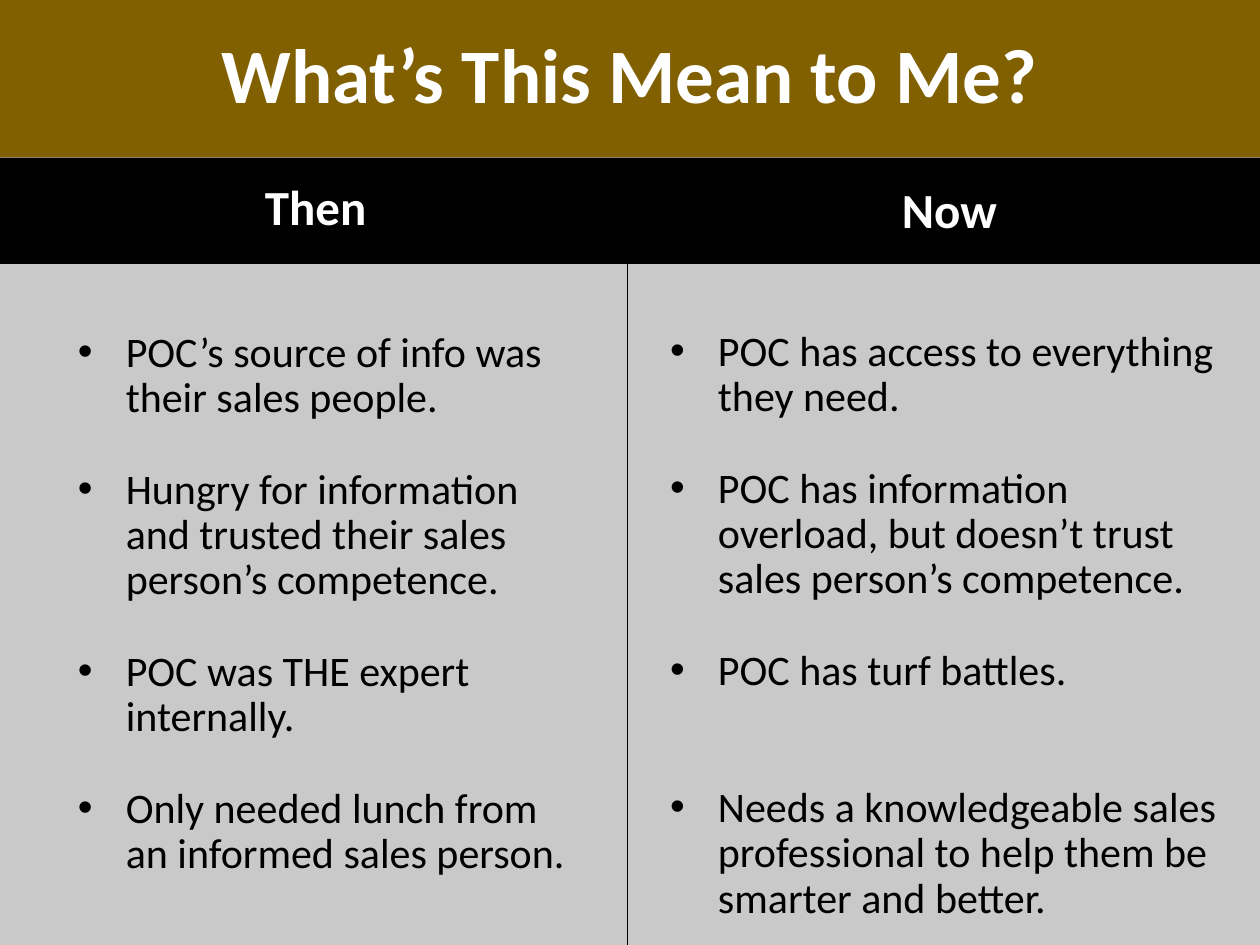
from dataclasses import dataclass

from lxml.etree import SubElement
from pptx import Presentation
from pptx.dml.color import RGBColor
from pptx.enum.shapes import MSO_SHAPE
from pptx.enum.text import MSO_ANCHOR, PP_ALIGN
from pptx.oxml.ns import qn
from pptx.util import Inches, Pt


@dataclass(frozen=True)
class Theme:
    font: str = "Calibri"
    gold: str = "806000"
    black: str = "000000"
    white: str = "FFFFFF"
    gray: str = "C9C9C9"
    title: int = 44
    head: int = 28
    body: int = 24
    gap: float = 26.3
    lead: float = 0.9


@dataclass(frozen=True)
class Box:
    left: float
    top: float
    width: float
    height: float

    def inner(self, left, top, width, height):
        return Box(self.left + left, self.top + top, width, height)

    def place(self):
        return [Inches(n) for n in (self.left, self.top, self.width, self.height)]


THEME = Theme()


def add_rect(slide, box, fill, line=None):
    shape = slide.shapes.add_shape(MSO_SHAPE.RECTANGLE, *box.place())
    shape.shadow.inherit = False
    shape.fill.solid()
    shape.fill.fore_color.rgb = RGBColor.from_string(fill)
    if line:
        shape.line.color.rgb = RGBColor.from_string(line)
        shape.line.width = Pt(0.5)
    else:
        shape.line.fill.background()


def add_frame(slide, box):
    frame = slide.shapes.add_textbox(*box.place()).text_frame
    frame.word_wrap = True
    return frame


def style(para, size, color, bold=False):
    para.line_spacing = THEME.lead
    for run in para.runs:
        run.font.name = THEME.font
        run.font.size = Pt(size)
        run.font.bold = bold
        run.font.color.rgb = RGBColor.from_string(color)


def add_label(slide, box, text, size):
    frame = add_frame(slide, box)
    frame.vertical_anchor = MSO_ANCHOR.MIDDLE
    frame.text = text
    para = frame.paragraphs[0]
    para.alignment = PP_ALIGN.CENTER
    style(para, size, THEME.white, True)


def add_list(slide, box, items):
    frame = add_frame(slide, box)
    for index, (text, gaps) in enumerate(items):
        para = frame.add_paragraph() if index else frame.paragraphs[0]
        para.text = text
        props = para._p.get_or_add_pPr()
        props.set("marL", str(Inches(0.38)))
        props.set("indent", str(-Inches(0.38)))
        SubElement(props, qn("a:buFont"), typeface="Arial")
        SubElement(props, qn("a:buChar"), char="•")
        if gaps:
            para.space_before = Pt(gaps * THEME.gap)
        style(para, THEME.body, THEME.black)


def add_title(slide, box, text):
    add_rect(slide, box, THEME.gold)
    add_label(slide, box.inner(0.5, 0, box.width - 1, box.height), text, THEME.title)


def add_column(slide, box, bar, panel, label, body, name, items):
    add_rect(slide, box.inner(0, 0, box.width, bar), THEME.black)
    add_rect(slide, box.inner(*panel), THEME.gray, THEME.black)
    add_label(slide, box.inner(*label), name, THEME.head)
    add_list(slide, box.inner(*body), items)


def main():
    deck = Presentation()
    deck.slide_width, deck.slide_height = Inches(10), Inches(7.5)
    slide = deck.slides.add_slide(deck.slide_layouts[6])
    add_title(slide, Box(0, 0, 10, 1.25), "What’s This Mean to Me?")
    add_column(
        slide, Box(0, 1.25, 5.01, 6.25), 1.25,
        (-0.05, 0.84, 5.08, 5.43), (0, 0, 5.01, 0.82), (0.52, 1.33, 4.07, 4.92),
        "Then",
        [
            ("POC’s source of info was their sales people.", 0),
            ("Hungry for information and trusted their sales person’s competence.", 1),
            ("POC was THE expert internally.", 1),
            ("Only needed lunch from an informed sales person.", 1),
        ],
    )
    add_column(
        slide, Box(5.01, 1.25, 4.99, 6.25), 0.99,
        (-0.03, 0.84, 5.05, 5.43), (0.03, 0.1, 4.99, 0.67), (0.21, 1.32, 4.64, 3.92),
        "Now",
        [
            ("POC has access to everything they need.", 0),
            ("POC has information overload, but doesn’t trust sales person’s competence.", 1),
            ("POC has turf battles.", 1),
            ("Needs a knowledgeable sales professional to help them be smarter and better.", 2),
        ],
    )
    deck.save("out.pptx")


if __name__ == "__main__":
    main()
